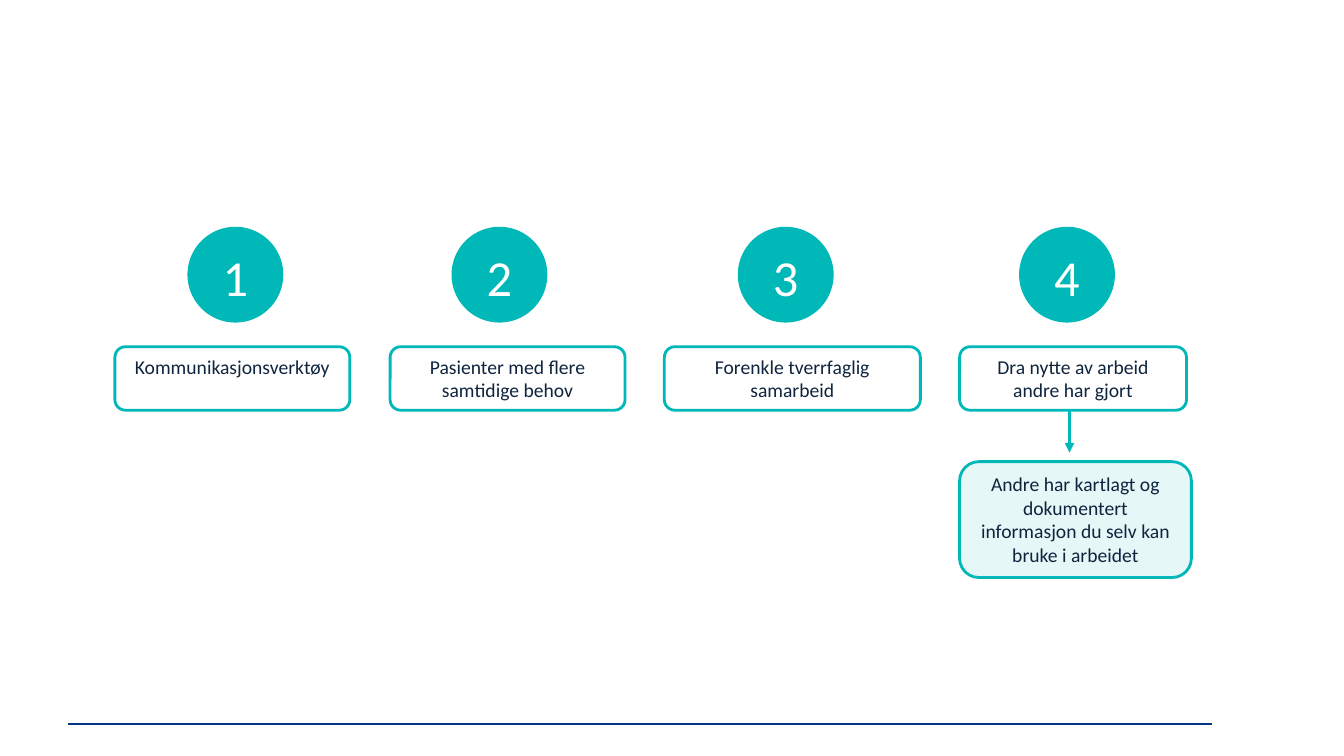
from dataclasses import dataclass

from lxml.etree import SubElement
from pptx import Presentation
from pptx.dml.color import RGBColor
from pptx.enum.shapes import MSO_CONNECTOR as Connector, MSO_SHAPE as Shape
from pptx.enum.text import MSO_ANCHOR as Anchor, PP_ALIGN as Align
from pptx.oxml.ns import qn
from pptx.util import Inches, Pt

WIDTH, HEIGHT = Inches(13.333), Inches(7.5)


@dataclass(frozen=True)
class Theme:
    font: str = "Calibri"
    teal: RGBColor = RGBColor(0x00, 0xB8, 0xB7)
    ink: RGBColor = RGBColor(0x0F, 0x24, 0x3E)
    white: RGBColor = RGBColor(0xFF, 0xFF, 0xFF)
    navy: RGBColor = RGBColor(0x04, 0x35, 0x85)
    label_size: int = 14
    number_size: int = 36
    box_line: float = 2
    arrow_line: float = 2.25
    footer_line: float = 1.25


THEME = Theme()

# Horizontal and vertical positions are percentages of the slide's width and height.
BOX_TOP, BOX_HEIGHT = 45.87, 8.4
CIRCLE_TOP, CIRCLE_WIDTH, CIRCLE_HEIGHT = 30, 7.13, 12.67
NUMBER_TOP, NUMBER_WIDTH, NUMBER_HEIGHT = 31.87, 7.43, 9.47
DETAIL_AREA = (71.4, 61.07, 17.25, 15.33)
DETAIL_TEXT = "Andre har kartlagt og dokumentert informasjon du selv kan bruke i arbeidet"
ARROW = (79.58, BOX_TOP + BOX_HEIGHT, 79.58, 59.87)
FOOTER_RULE = (5.03, 95.73, 90.15, 95.73)

# Label, box left, box width, circle centre
STEPS = [
    ("Kommunikasjonsverktøy", 8.55, 17.48, 17.51),
    ("Pasienter med flere samtidige behov", 29.03, 17.48, 37.16),
    ("Forenkle tverrfaglig samarbeid", 49.43, 19.05, 58.46),
    ("Dra nytte av arbeid andre har gjort", 71.4, 16.88, 79.39),
]


def to_lengths(shares):
    """Turn alternating x and y percentages into slide lengths."""
    return [round(share / 100 * (HEIGHT if index % 2 else WIDTH))
            for index, share in enumerate(shares)]


def write_text(shape, text, size, color):
    frame = shape.text_frame
    frame.word_wrap = True
    frame.vertical_anchor = Anchor.TOP
    paragraph = frame.paragraphs[0]
    paragraph.alignment = Align.CENTER
    run = paragraph.add_run()
    run.text = text
    run.font.name = THEME.font
    run.font.size = Pt(size)
    run.font.color.rgb = color


def add_filled_shape(slide, kind, area, fill):
    shape = slide.shapes.add_shape(kind, *to_lengths(area))
    shape.shadow.inherit = False
    shape.fill.solid()
    shape.fill.fore_color.rgb = fill
    shape.line.fill.background()
    return shape


def add_label_box(slide, text, area, fill):
    box = add_filled_shape(slide, Shape.ROUNDED_RECTANGLE, area, fill)
    box.line.color.rgb = THEME.teal
    box.line.width = Pt(THEME.box_line)
    write_text(box, text, THEME.label_size, THEME.ink)
    return box


def add_number_circle(slide, number, centre):
    circle_area = (centre - CIRCLE_WIDTH / 2, CIRCLE_TOP, CIRCLE_WIDTH, CIRCLE_HEIGHT)
    add_filled_shape(slide, Shape.OVAL, circle_area, THEME.teal)
    number_area = (centre - NUMBER_WIDTH / 2, NUMBER_TOP, NUMBER_WIDTH, NUMBER_HEIGHT)
    text_box = slide.shapes.add_textbox(*to_lengths(number_area))
    write_text(text_box, str(number), THEME.number_size, THEME.white)


def add_line(slide, ends, color, width):
    line = slide.shapes.add_connector(Connector.STRAIGHT, *to_lengths(ends))
    line.line.color.rgb = color
    line.line.width = Pt(width)
    SubElement(line._element.spPr, qn("a:effectLst"))
    return line


def add_arrow(slide, ends):
    arrow = add_line(slide, ends, THEME.teal, THEME.arrow_line)
    SubElement(arrow.line._get_or_add_ln(), qn("a:tailEnd"), type="triangle")


def set_opacity(shape, percent):
    color = shape._element.spPr.find(qn("a:solidFill"))[0]
    SubElement(color, qn("a:alpha"), val=str(percent * 1000))


def main():
    presentation = Presentation()
    presentation.slide_width, presentation.slide_height = WIDTH, HEIGHT
    slide = presentation.slides.add_slide(presentation.slide_layouts[6])

    add_line(slide, FOOTER_RULE, THEME.navy, THEME.footer_line)
    for number, (label, left, width, centre) in enumerate(STEPS, start=1):
        add_label_box(slide, label, (left, BOX_TOP, width, BOX_HEIGHT), THEME.white)
        add_number_circle(slide, number, centre)
    add_arrow(slide, ARROW)
    detail = add_label_box(slide, DETAIL_TEXT, DETAIL_AREA, THEME.teal)
    set_opacity(detail, 10)

    presentation.save("out.pptx")


if __name__ == "__main__":
    main()
